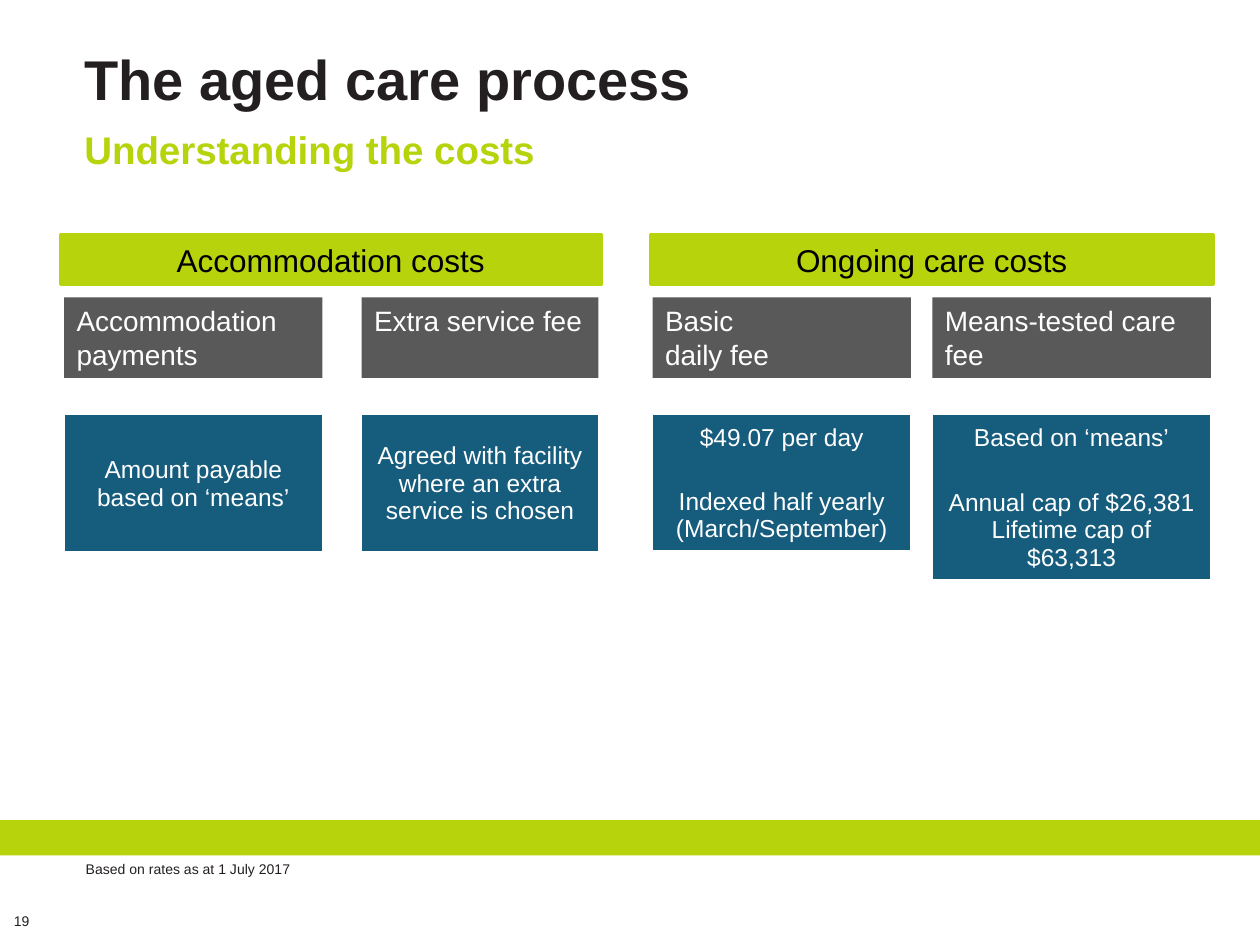
from dataclasses import dataclass

from lxml import etree
from pptx import Presentation
from pptx.dml.color import RGBColor
from pptx.enum.shapes import MSO_SHAPE
from pptx.enum.text import MSO_ANCHOR, PP_ALIGN
from pptx.oxml.ns import qn
from pptx.util import Inches, Pt

RECTANGLE = MSO_SHAPE.RECTANGLE
TOP, MIDDLE, BOTTOM = MSO_ANCHOR.TOP, MSO_ANCHOR.MIDDLE, MSO_ANCHOR.BOTTOM
LEFT, CENTER = PP_ALIGN.LEFT, PP_ALIGN.CENTER


@dataclass(frozen=True)
class Theme:
    font: str = "Arial"
    lime: str = "B7D30B"
    gray: str = "595959"
    blue: str = "165C7D"
    white: str = "FFFFFF"
    black: str = "000000"
    ink: str = "231F20"
    title: int = 32
    subtitle: int = 22
    group: int = 18
    heading: int = 16
    detail: int = 14
    small: int = 8


THEME = Theme()
GROUP_TOP, HEADING_TOP, DETAIL_TOP = 1.86, 2.36, 3.29
GROUP_HEIGHT, HEADING_HEIGHT = 0.4, 0.64

# Cost groups: label, left, width
GROUPS = [
    ("Accommodation costs", 0.48, 4.29),
    ("Ongoing care costs", 5.16, 4.47),
]
# Fees: left, width, heading lines, detail height, detail lines
FEES = [
    (0.51, 2.05, ["Accommodation payments"], 1.1,
     ["Amount payable based on ‘means’"]),
    (2.87, 1.88, ["Extra service fee"], 1.1,
     ["Agreed with facility where an extra service is chosen"]),
    (5.18, 2.05, ["Basic", "daily fee"], 1.09,
     ["$49.07 per day", "Indexed half yearly (March/September)"]),
    (7.4, 2.21, ["Means-tested care fee"], 1.32,
     ["Based on ‘means’", "Annual cap of $26,381 Lifetime cap of $63,313"]),
]


def place(shape, left, top, width, height):
    box = {"left": left, "top": top, "width": width, "height": height}
    for name, value in box.items():
        setattr(shape, name, Inches(value))


def remove_margins(frame):
    for side in ("left", "top", "right", "bottom"):
        setattr(frame, f"margin_{side}", 0)


def write(frame, lines, size, color, bold=False, align=LEFT, gap=0, spacing=None):
    """Write one paragraph per line, with a gap before all but the first."""
    frame.word_wrap = True
    for index, line in enumerate(lines):
        paragraph = frame.paragraphs[0] if index == 0 else frame.add_paragraph()
        paragraph.text = line
        layout = {"alignment": align, "space_before": Pt(gap if index else 0),
                  "line_spacing": spacing}
        for name, value in layout.items():
            setattr(paragraph, name, value)
        font = paragraph.runs[0].font
        style = {"name": THEME.font, "size": Pt(size), "bold": bold}
        for name, value in style.items():
            setattr(font, name, value)
        font.color.rgb = RGBColor.from_string(color)


def remove_bullet(paragraph):
    properties = paragraph._p.get_or_add_pPr()
    properties.set("marL", "0")
    properties.set("indent", "0")
    etree.SubElement(properties, qn("a:buNone"))


def add_text(slide, box, text, size, color, bold=False, anchor=TOP):
    shape = slide.shapes.add_textbox(*map(Inches, box))
    remove_margins(shape.text_frame)
    shape.text_frame.vertical_anchor = anchor
    write(shape.text_frame, [text], size, color, bold)


def fill_placeholder(shape, box, text, size, bold=False, anchor=TOP, spacing=None):
    place(shape, *box)
    remove_margins(shape.text_frame)
    shape.text_frame.vertical_anchor = anchor
    remove_bullet(shape.text_frame.paragraphs[0])
    write(shape.text_frame, [text], size, THEME.ink, bold, spacing=spacing)


def add_bar(slide, box, color, outlined=False):
    shape = slide.shapes.add_shape(RECTANGLE, *map(Inches, box))
    shape.shadow.inherit = False
    shape.fill.solid()
    shape.fill.fore_color.rgb = RGBColor.from_string(color)
    if outlined:
        shape.line.color.rgb = RGBColor.from_string(color)
        shape.line.width = Pt(1.75)
    else:
        shape.line.fill.background()
    return shape.text_frame


def add_borders(cell):
    """Draw white cell borders, with a thicker one at the bottom."""
    properties = cell._tc.get_or_add_tcPr()
    widths = {"lnL": 1, "lnR": 1, "lnT": 1, "lnB": 3}
    for index, (tag, width) in enumerate(widths.items()):
        line = etree.Element(qn(f"a:{tag}"), w=str(Pt(width)))
        fill = etree.SubElement(line, qn("a:solidFill"))
        etree.SubElement(fill, qn("a:srgbClr"), val=THEME.white)
        properties.insert(index, line)


def add_detail(slide, box, lines):
    table = slide.shapes.add_table(1, 1, *map(Inches, box)).table
    table.first_row = table.horz_banding = False
    cell = table.cell(0, 0)
    cell.fill.solid()
    cell.fill.fore_color.rgb = RGBColor.from_string(THEME.blue)
    cell.vertical_anchor = MIDDLE
    add_borders(cell)
    write(cell.text_frame, lines, THEME.detail, THEME.white, align=CENTER, gap=21)


def add_group(slide, label, left, width):
    box = (left, GROUP_TOP, width, GROUP_HEIGHT)
    frame = add_bar(slide, box, THEME.lime, outlined=True)
    frame.vertical_anchor = MIDDLE
    write(frame, [label], THEME.group, THEME.black, align=CENTER)


def add_fee(slide, left, width, heading, detail_height, detail):
    frame = add_bar(slide, (left, HEADING_TOP, width, HEADING_HEIGHT), THEME.gray)
    frame.vertical_anchor = TOP
    write(frame, heading, THEME.heading, THEME.white)
    add_detail(slide, (left, DETAIL_TOP, width, detail_height), detail)


def main():
    presentation = Presentation()
    presentation.slide_width, presentation.slide_height = Inches(10), Inches(7.5)
    slide = presentation.slides.add_slide(presentation.slide_layouts[1])
    title, note = slide.placeholders

    # Footer band and page number
    add_bar(slide, (0, 6.51, 10, 0.28), THEME.lime)
    add_text(slide, (0.11, 7.24, 0.48, 0.13), "19", THEME.small, THEME.ink,
             anchor=MIDDLE)

    # Title, subtitle and footnote
    fill_placeholder(title, (0.67, 0.49, 8.74, 0.39), "The aged care process",
                     THEME.title, bold=True, anchor=BOTTOM, spacing=0.8)
    add_text(slide, (0.67, 0.98, 8.74, 0.39), "Understanding the costs",
             THEME.subtitle, THEME.lime, bold=True, anchor=BOTTOM)
    fill_placeholder(note, (0.68, 6.83, 6.72, 0.54),
                     "Based on rates as at 1 July 2017", THEME.small)

    # Cost groups and their fees
    for group in GROUPS:
        add_group(slide, *group)
    for fee in FEES:
        add_fee(slide, *fee)

    presentation.save("out.pptx")


if __name__ == "__main__":
    main()
